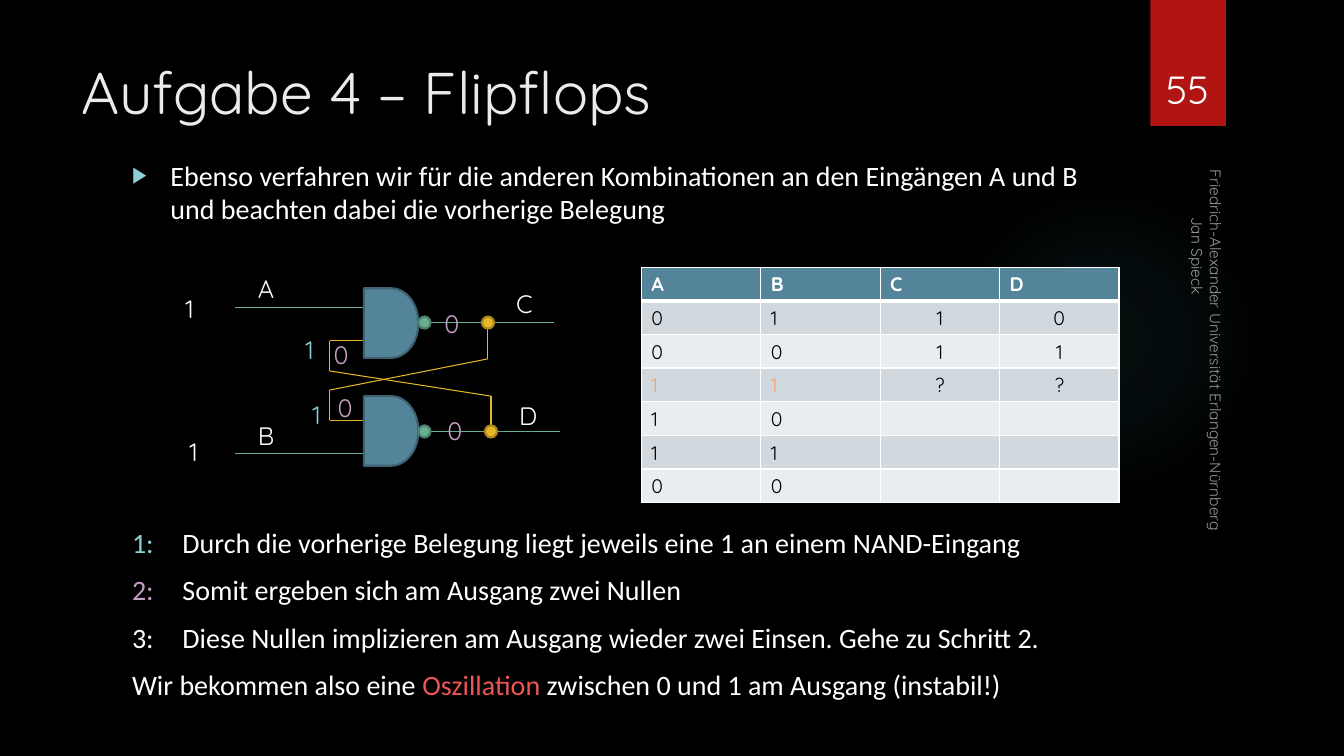
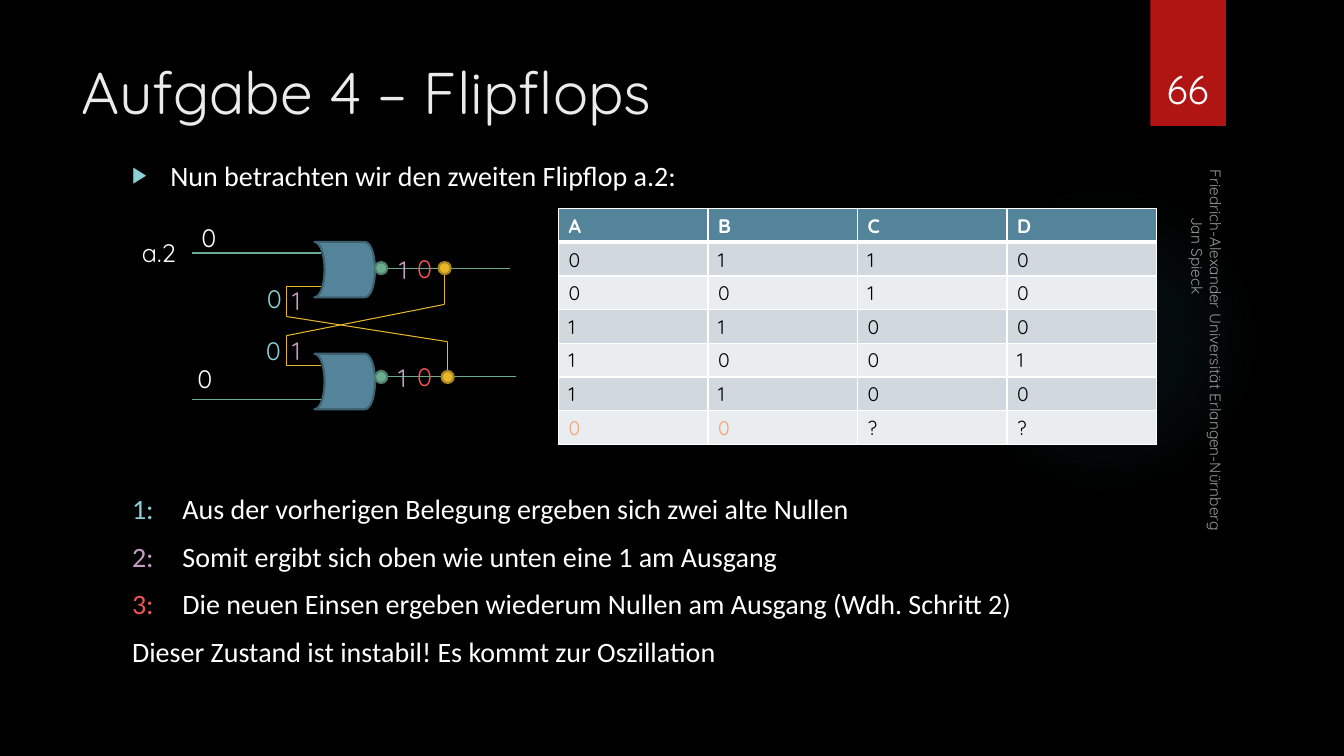
import itertools

import pptx
import pptx.dml.color
import pptx.enum.shapes
import pptx.enum.text
import pptx.oxml
import pptx.oxml.ns
import pptx.util

SHAPE = pptx.enum.shapes.MSO_SHAPE
ALIGN = pptx.enum.text.PP_ALIGN
ANCHOR = pptx.enum.text.MSO_ANCHOR
Inches, Pt = pptx.util.Inches, pptx.util.Pt


class Theme:
    head_font, body_font = "Quicksand", "Calibri"
    title, number, body, label, cell, footer = 42, 28, 20, 18, 14, 11
    black, white, title_color = "000000", "FFFFFF", "EBEBEB"
    ribbon, glow, muted = "B01513", "50B9C1", "999999"
    cyan, mauve, red, orange = "8AD0D6", "C59EC3", "ED5654", "F4A16F"
    gate, gate_line = "54849A", "3E6272"
    wire, wire_line = "6AAC90", "4E7F6B"
    loop, loop_line = "E6B729", "AA871E"
    bands = ("D1D9DE", "E9EDEF")


# Content
T = Theme
TITLE = "Aufgabe 4 – Flipflops"
FOOTER = ("Friedrich-Alexander Universität Erlangen-Nürnberg", "Jan Spieck")
SLIDES = [
    dict(
        number="55",
        lead="Ebenso verfahren wir für die anderen Kombinationen an den Eingängen "
             "A und B und beachten dabei die vorherige Belegung",
        steps=[
            [("1:", T.cyan), ("\tDurch die vorherige Belegung liegt jeweils eine 1 "
                              "an einem NAND-Eingang", T.white)],
            [("2:", T.mauve), ("\tSomit ergeben sich am Ausgang zwei Nullen", T.white)],
            [("3:\tDiese Nullen implizieren am Ausgang wieder zwei Einsen. "
              "Gehe zu Schritt 2.", T.white)],
            [("Wir bekommen also eine ", T.white), ("Oszillation", T.red),
             (" zwischen 0 und 1 am Ausgang (instabil!)", T.white)],
        ],
        rows=["ABCD", "0110", "0011", "11??", "10", "11", "00"],
        marked=3, centered=True, table_box=(6.36, 2.65, 4.74),
        origin=(2.33, 3.05),
        gate=(SHAPE.FLOWCHART_DELAY, 0.54, 0.69, (-0.19, 0.88), False),
        labels=[
            (T.white, [("1", -0.59, -0.19), ("1", -0.55, 1.23),
                       ("A", 0.13, -0.39), ("B", 0.13, 1.07),
                       ("C", 2.69, -0.24), ("D", 2.72, 0.87)]),
            (T.cyan, [("1", 0.67, 0.86), ("1", 0.6, 0.22)]),
            (T.mauve, [("0", 2.01, 1.02), ("0", 1.98, -0.04),
                       ("0", 0.88, 0.27), ("0", 0.92, 0.79)]),
        ],
    ),
    dict(
        number="66",
        lead="Nun betrachten wir den zweiten Flipflop a.2:",
        steps=[
            [("1:", T.cyan), ("\tAus der vorherigen Belegung ergeben sich zwei alte "
                              "Nullen", T.white)],
            [("2:", T.mauve), ("\tSomit ergibt sich oben wie unten eine 1 am Ausgang",
                               T.white)],
            [("3:", T.red), ("\tDie neuen Einsen ergeben wiederum Nullen am Ausgang "
                             "(Wdh. Schritt 2)", T.white)],
            [("Dieser Zustand ist instabil! Es kommt zur Oszillation", T.white)],
        ],
        rows=["ABCD", "0110", "0010", "1100", "1001", "1100", "00??"],
        marked=6, centered=False, table_box=(5.54, 2.07, 5.93),
        origin=(1.9, 2.51),
        gate=(SHAPE.FLOWCHART_STORED_DATA, 0.6, 0.55, (-0.11, 1.0), True),
        labels=[
            (T.white, [("a.2", -0.59, -0.2), ("0", 0, -0.35), ("0", -0.04, 1.05)]),
            (T.cyan, [("0", 0.65, 0.25), ("0", 0.64, 0.77)]),
            (T.mauve, [("1", 1.96, -0.04), ("1", 1.95, 1.04),
                       ("1", 0.9, 0.27), ("1", 0.9, 0.77)]),
            (T.red, [("0", 2.14, -0.05), ("0", 2.14, 1.03)]),
        ],
    ),
]

# Circuit geometry in inches, measured from the start of input A
GATE_RIGHT, DOT = 1.82, 0.12
OUTPUTS = (0.15, 1.23)
TAPS = (2.51, 2.54)
WIRES = [
    [(0, 0), (1.28, 0)],
    [(0, 1.45), (1.28, 1.45)],
    [(1.88, 0.15), (3.16, 0.15)],
    [(1.94, 1.23), (3.22, 1.23)],
]
LOOPS = [
    [(2.51, 0.21), (2.51, 0.51), (0.94, 0.82), (0.94, 1.12), (1.28, 1.12)],
    [(2.54, 1.17), (2.54, 0.88), (0.94, 0.63), (0.94, 0.33), (1.28, 0.33)],
]
LABEL_WIDTH = {"A": 0.39, "B": 0.35, "C": 0.41, "D": 0.39, "a.2": 0.58}


# Helpers
def rgb(color):
    return pptx.dml.color.RGBColor.from_string(color)


def xml(tag, inner="", **attrs):
    """Build one DrawingML element."""
    values = "".join(f' {k}="{v}"' for k, v in attrs.items())
    return pptx.oxml.parse_xml(
        f'<a:{tag} {pptx.oxml.ns.nsdecls("a")}{values}>{inner}</a:{tag}>')


def add_run(p, text, size, color, font=T.head_font, bold=False):
    r = p.add_run()
    r.text = text
    r.font.size, r.font.name, r.font.bold = Pt(size), font, bold
    r.font.color.rgb = rgb(color)


def add_shape(s, kind, x, y, w, h, fill, line=None):
    sp = s.shapes.add_shape(kind, *map(Inches, (x, y, w, h)))
    sp.shadow.inherit = False
    sp.fill.solid()
    sp.fill.fore_color.rgb = rgb(fill)
    if line:
        sp.line.color.rgb = rgb(line)
        sp.line.width = Pt(1.5)
    else:
        sp.line.fill.background()
    return sp


def add_text(s, x, y, w, h, wrap=True, anchor=ANCHOR.TOP):
    sp = s.shapes.add_textbox(*map(Inches, (x, y, w, h)))
    sp.text_frame.word_wrap = wrap
    sp.text_frame.vertical_anchor = anchor
    return sp


def add_path(s, points, color):
    for start, end in itertools.pairwise(points):
        line = s.shapes.add_connector(
            pptx.enum.shapes.MSO_CONNECTOR.STRAIGHT, *map(Inches, (*start, *end)))
        line.line.color.rgb = rgb(color)
        line.line.width = Pt(0.75)
        line._element.spPr.append(xml("effectLst"))


# Parts shared by all slides
def set_up_template(prs):
    fill = prs.slide_master.background.fill
    fill.solid()
    fill.fore_color.rgb = rgb(T.black)
    layout = prs.slide_layouts[1]
    boxes = {0: (0.71, 0.5, 10.29, 1.53), 1: (1.21, 1.52, 9.98, 5.51)}
    for ph in layout.placeholders:
        box = boxes.get(ph.placeholder_format.idx)
        if box:
            ph.left, ph.top, ph.width, ph.height = map(Inches, box)
    return layout


def add_frame(s, number):
    glow = add_shape(s, SHAPE.OVAL, 9.41, 1.83, 3.08, 3.08, T.glow)
    stops = "".join(
        f'<a:gs pos="{pos}000"><a:srgbClr val="{T.glow}">'
        f'<a:alpha val="{alpha}000"/></a:srgbClr></a:gs>'
        for pos, alpha in ((0, 7), (36, 6), (69, 0), (100, 0)))
    spPr = glow._element.spPr
    spPr.replace(spPr.find(pptx.oxml.ns.qn("a:solidFill")), xml(
        "gradFill", f'<a:gsLst>{stops}</a:gsLst><a:path path="circle">'
        '<a:fillToRect l="50000" t="50000" r="50000" b="50000"/></a:path>'))
    add_shape(s, SHAPE.RECTANGLE, 11.41, 0, 0.75, 1.25, T.ribbon)

    p = add_text(s, 11.32, 0.32, 0.92, 0.84,
                 anchor=ANCHOR.BOTTOM).text_frame.paragraphs[0]
    p.alignment = ALIGN.CENTER
    add_run(p, number, T.number, T.white)

    footer = add_text(s, 9.79, 3.53, 4.22, 0.33, anchor=ANCHOR.BOTTOM)
    footer.rotation = 90
    tf = footer.text_frame
    add_run(tf.paragraphs[0], FOOTER[0], T.footer, T.muted)
    p = tf.add_paragraph()
    p._p.get_or_add_pPr().set("marL", str(Inches(0.47)))
    add_run(p, FOOTER[1], T.footer, T.muted)

    tf = s.shapes.title.text_frame
    tf.vertical_anchor = ANCHOR.TOP
    p = tf.paragraphs[0]
    p.alignment = ALIGN.LEFT
    add_run(p, TITLE, T.title, T.title_color)


# Slide parts
def add_body(s, lead, steps):
    tf = s.placeholders[1].text_frame
    tf.auto_size = pptx.enum.text.MSO_AUTO_SIZE.NONE
    tf.vertical_anchor = ANCHOR.TOP
    p = tf.paragraphs[0]
    pPr = p._p.get_or_add_pPr()
    pPr.set("marL", str(Inches(0.38)))
    pPr.set("indent", str(-Inches(0.38)))
    pPr.append(xml("buClr", f'<a:srgbClr val="{T.cyan}"/>'))
    pPr.append(xml("buSzPct", val=80000))
    pPr.append(xml("buFont", typeface="Arial"))
    pPr.append(xml("buChar", char="▶"))
    p.space_before = Pt(0)
    add_run(p, lead, T.body, T.white, T.body_font)
    for i, runs in enumerate(steps):
        p = tf.add_paragraph()
        pPr = p._p.get_or_add_pPr()
        pPr.set("marL", "0")
        pPr.set("indent", "0")
        pPr.append(xml("buNone"))
        pPr.append(xml("tabLst", f'<a:tab pos="{Inches(0.5)}" algn="l"/>'))
        # The first step leaves room for the circuit and the table
        p.space_before = Pt(10 if i else 214)
        for text, color in runs:
            add_run(p, text, T.body, color, T.body_font)


def add_truth_table(s, rows, marked, centered, table_box):
    x, y, w = table_box
    table = s.shapes.add_table(
        len(rows), 4, *map(Inches, (x, y, w, 2.33))).table
    for i, row in enumerate(rows):
        table.rows[i].height = Inches(2.33 / len(rows))
        for j, text in enumerate(row.ljust(4)):
            cell = table.cell(i, j)
            tcPr = cell._tc.get_or_add_tcPr()
            for side in "LRTB":
                thick = (i == 0 and side == "B") or (i == 1 and side == "T")
                tcPr.append(xml(
                    f"ln{side}",
                    f'<a:solidFill><a:srgbClr val="{T.white}"/></a:solidFill>',
                    w=Pt(3 if thick else 1)))
            cell.fill.solid()
            cell.fill.fore_color.rgb = rgb(T.bands[(i - 1) % 2] if i else T.gate)
            p = cell.text_frame.paragraphs[0]
            if text == " ":
                p._p.get_or_add_endParaRPr().set("sz", str(T.cell * 100))
                continue
            if centered and i and j > 1:
                p.alignment = ALIGN.CENTER
            color = T.orange if i == marked and j < 2 else T.black
            add_run(p, text, T.cell, color if i else T.white, bold=i == 0)


def add_circuit(s, origin, gate, labels):
    ox, oy = origin
    for paths, color in ((WIRES, T.wire), (LOOPS, T.loop)):
        for points in paths:
            add_path(s, [(ox + x, oy + y) for x, y in points], color)

    kind, w, h, tops, flipped = gate
    for top, out_y, tap_x in zip(tops, OUTPUTS, TAPS):
        sp = add_shape(s, kind, ox + GATE_RIGHT - w, oy + top, w, h,
                       T.gate, T.gate_line)
        if flipped:
            sp._element.spPr.xfrm.set("flipH", "1")
        dot_y = oy + out_y - DOT / 2
        add_shape(s, SHAPE.OVAL, ox + GATE_RIGHT, dot_y, DOT, DOT,
                  T.wire, T.wire_line)
        add_shape(s, SHAPE.OVAL, ox + tap_x - DOT / 2, dot_y, DOT, DOT,
                  T.loop, T.loop_line)

    for color, places in labels:
        for text, x, y in places:
            sp = add_text(s, ox + x, oy + y, LABEL_WIDTH.get(text, 0.34), 0.4,
                          wrap=False)
            add_run(sp.text_frame.paragraphs[0], text, T.label, color)


def main():
    prs = pptx.Presentation()
    prs.slide_width, prs.slide_height = Inches(13.33), Inches(7.5)
    layout = set_up_template(prs)
    for d in SLIDES:
        s = prs.slides.add_slide(layout)
        add_frame(s, d["number"])
        add_body(s, d["lead"], d["steps"])
        add_circuit(s, d["origin"], d["gate"], d["labels"])
        add_truth_table(s, d["rows"], d["marked"], d["centered"], d["table_box"])
    prs.save("out.pptx")


if __name__ == "__main__":
    main()
